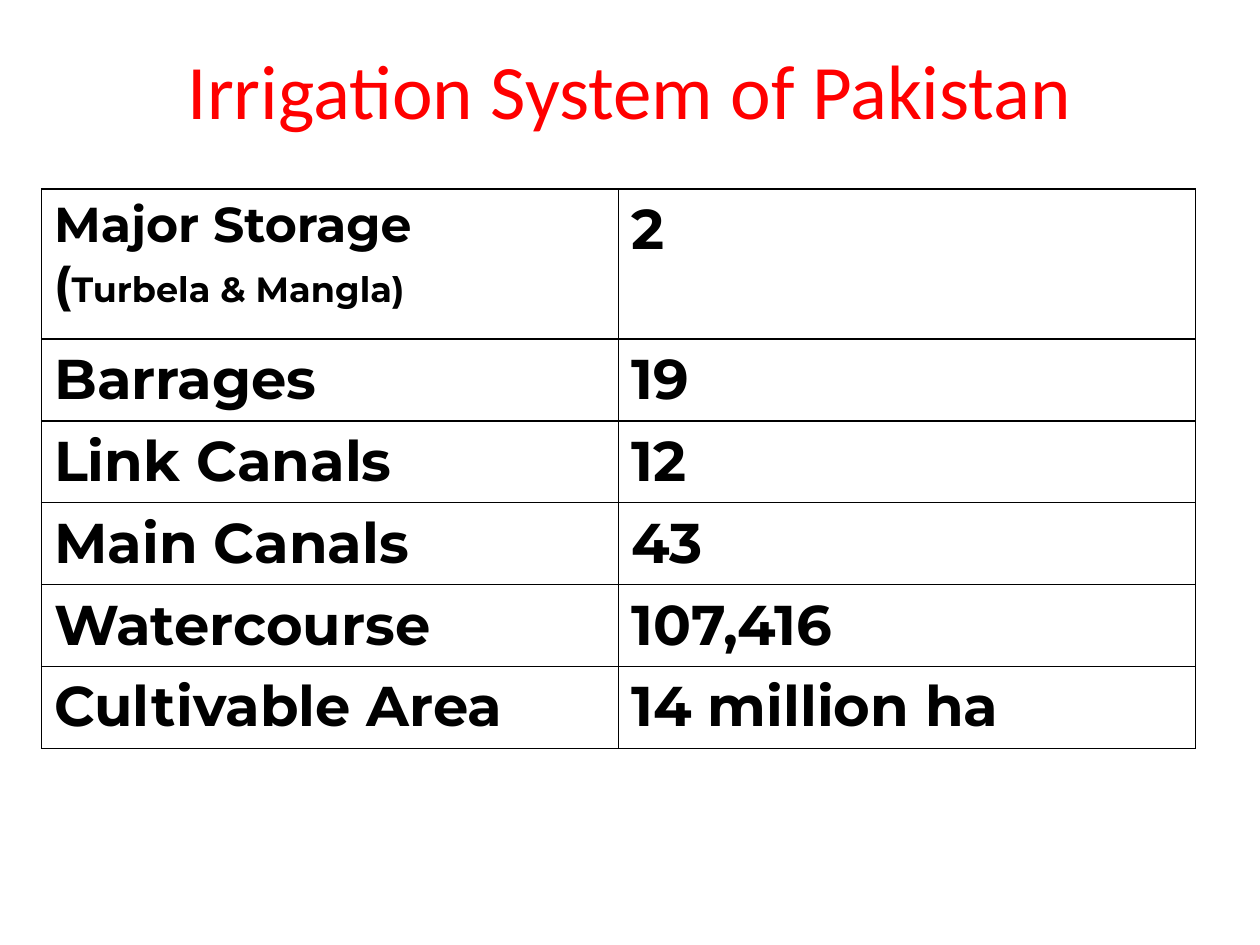
"""Build a slide with a table of Pakistan's irrigation system."""
from lxml import etree
from pptx import Presentation
from pptx.dml.color import RGBColor
from pptx.enum import text
from pptx.oxml.ns import qn
from pptx.util import Inches, Pt

BLACK = RGBColor(0x00, 0x00, 0x00)
RED = RGBColor(0xFF, 0x00, 0x00)

ROWS = [
    ([[("Major Storage", 28)], [("(", 28), ("Turbela & Mangla)", 20)]], "2"),
    ([[("Barrages", 32)]], "19"),
    ([[("Link Canals", 32)]], "12"),
    ([[("Main Canals", 32)]], "43"),
    ([[("Watercourse", 32)]], "107,416"),
    ([[("Cultivable Area", 32)]], "14 million ha"),
]
FIRST_HEIGHT, ROW_HEIGHT = 1.19, 0.65
COLUMN_WIDTH = 4.58


def add_run(paragraph, words, format_values):
    run = paragraph.add_run()
    run.text = words
    for name, value in format_values.items():
        if name == "color":
            run.font.color.rgb = value
        else:
            setattr(run.font, name, value)


def add_borders(cell):
    properties = cell._tc.get_or_add_tcPr()
    for position, side in enumerate(("a:lnL", "a:lnR", "a:lnT", "a:lnB")):
        line = etree.Element(qn(side), w=str(Pt(1)))
        fill = etree.SubElement(line, qn("a:solidFill"))
        etree.SubElement(fill, qn("a:srgbClr"), val=str(BLACK))
        properties.insert(position, line)


presentation = Presentation()
presentation.slide_width = Inches(10)
presentation.slide_height = Inches(7.5)
slide = presentation.slides.add_slide(presentation.slide_layouts[5])

title = slide.shapes.title
title_box = {"left": 0, "top": 0.28, "width": 10, "height": 0.84}
for name, value in title_box.items():
    setattr(title, name, Inches(value))
title.text_frame.vertical_anchor = text.MSO_ANCHOR.MIDDLE
title_paragraph = title.text_frame.paragraphs[0]
title_paragraph.alignment = text.PP_ALIGN.CENTER
add_run(title_paragraph, "Irrigation System of Pakistan",
        {"name": "Calibri", "size": Pt(44), "color": RED})

table_height = FIRST_HEIGHT + ROW_HEIGHT * (len(ROWS) - 1)
table = slide.shapes.add_table(
    len(ROWS), 2, Inches(0.33), Inches(1.5),
    Inches(2 * COLUMN_WIDTH), Inches(table_height)).table
table.first_row = False
table.horz_banding = False
for column in table.columns:
    column.width = Inches(COLUMN_WIDTH)

for row_index, (label, amount) in enumerate(ROWS):
    table.rows[row_index].height = Inches(ROW_HEIGHT if row_index else FIRST_HEIGHT)
    for column_index, lines in enumerate((label, [[(amount, 32)]])):
        cell = table.cell(row_index, column_index)
        cell.fill.background()
        add_borders(cell)
        frame = cell.text_frame
        for line_index, runs in enumerate(lines):
            paragraph = frame.add_paragraph() if line_index else frame.paragraphs[0]
            for words, size in runs:
                add_run(paragraph, words, {"name": "Montserrat", "size": Pt(size),
                                           "bold": True, "color": BLACK})

presentation.save("out.pptx")
